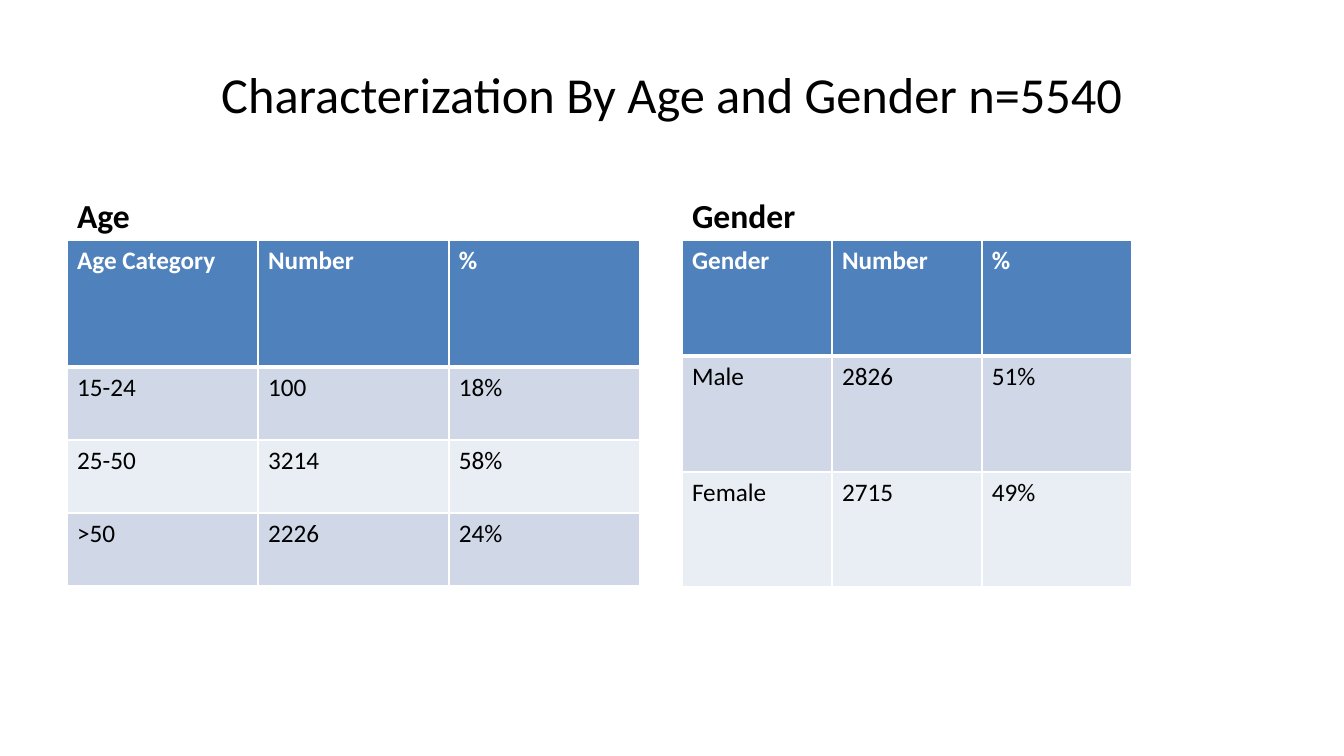
from lxml.etree import SubElement
from pptx import Presentation
from pptx.dml.color import RGBColor
from pptx.enum.text import MSO_ANCHOR, MSO_AUTO_SIZE, PP_ALIGN
from pptx.oxml.ns import qn
from pptx.util import Pt

TITLE = "Characterization By Age and Gender n=5540"
SECTIONS = [
    {
        "heading": "Age",
        "left": 67,
        "column_width": 191,
        "row_heights": [127, 73, 73, 73],
        "rows": [
            ("Age Category", "Number", "%"),
            ("15-24", "100", "18%"),
            ("25-50", "3214", "58%"),
            (">50", "2226", "24%"),
        ],
    },
    {
        "heading": "Gender",
        "left": 682,
        "column_width": 150,
        "row_heights": [116, 116, 115],
        "rows": [
            ("Gender", "Number", "%"),
            ("Male", "2826", "51%"),
            ("Female", "2715", "49%"),
        ],
    },
]

FONT = "Calibri"
BLACK = RGBColor(0x00, 0x00, 0x00)
WHITE = RGBColor(0xFF, 0xFF, 0xFF)
HEADER_BLUE = RGBColor(0x4F, 0x81, 0xBD)
BANDS = [RGBColor(0xD0, 0xD8, 0xE8), RGBColor(0xE9, 0xED, 0xF4)]

SLIDE_WIDTH, SLIDE_HEIGHT = 1344, 756
HEADING_TOP, HEADING_WIDTH, HEADING_HEIGHT = 169, 594, 71
TABLE_TOP = HEADING_TOP + HEADING_HEIGHT


def px(length):
    return round(length * 914400 / 100.8)


def place(shape, left, top, width, height):
    shape.left, shape.top = px(left), px(top)
    shape.width, shape.height = px(width), px(height)


def write(frame, text, size, color, bold=False):
    run = frame.paragraphs[0].add_run()
    run.text = text
    run.font.name = FONT
    run.font.size = Pt(size)
    run.font.bold = bold
    run.font.color.rgb = color


def set_borders(cell, widths):
    properties = cell._tc.get_or_add_tcPr()
    for position, (side, width) in enumerate(widths.items()):
        line = properties.makeelement(qn(f"a:ln{side}"), {"w": str(Pt(width))})
        fill = SubElement(line, qn("a:solidFill"))
        SubElement(fill, qn("a:srgbClr"), val=str(WHITE))
        properties.insert(position, line)


def add_section_table(slide, section):
    rows, heights = section["rows"], section["row_heights"]
    column_width = section["column_width"]
    column_count = len(rows[0])
    table = slide.shapes.add_table(
        len(rows), column_count, px(section["left"]), px(TABLE_TOP),
        px(column_width * column_count), px(sum(heights))).table
    for column in table.columns:
        column.width = px(column_width)
    for row_index, (values, height) in enumerate(zip(rows, heights)):
        table.rows[row_index].height = px(height)
        header = row_index == 0
        for column_index, value in enumerate(values):
            cell = table.cell(row_index, column_index)
            cell.fill.solid()
            cell.fill.fore_color.rgb = HEADER_BLUE if header else BANDS[(row_index - 1) % 2]
            write(cell.text_frame, value, 18, WHITE if header else BLACK, header)
            set_borders(cell, {"L": 1, "R": 1, "T": 3 if row_index == 1 else 1,
                               "B": 3 if header else 1})


def main():
    presentation = Presentation()
    presentation.slide_width = px(SLIDE_WIDTH)
    presentation.slide_height = px(SLIDE_HEIGHT)
    slide = presentation.slides.add_slide(
        presentation.slide_layouts.get_by_name("Comparison"))
    title, age, age_content, gender, gender_content = slide.placeholders
    for content in (age_content, gender_content):
        content.element.getparent().remove(content.element)

    place(title, 67, 30, 1210, 126)
    title.text_frame.auto_size = MSO_AUTO_SIZE.NONE
    title.text_frame.vertical_anchor = MSO_ANCHOR.MIDDLE
    title.text_frame.paragraphs[0].alignment = PP_ALIGN.CENTER
    write(title.text_frame, TITLE, 36, BLACK)

    for heading, section in zip((age, gender), SECTIONS):
        place(heading, section["left"], HEADING_TOP, HEADING_WIDTH, HEADING_HEIGHT)
        heading.text_frame.auto_size = MSO_AUTO_SIZE.NONE
        heading.text_frame.vertical_anchor = MSO_ANCHOR.BOTTOM
        write(heading.text_frame, section["heading"], 24, BLACK, True)
        add_section_table(slide, section)

    presentation.save("out.pptx")


if __name__ == "__main__":
    main()
